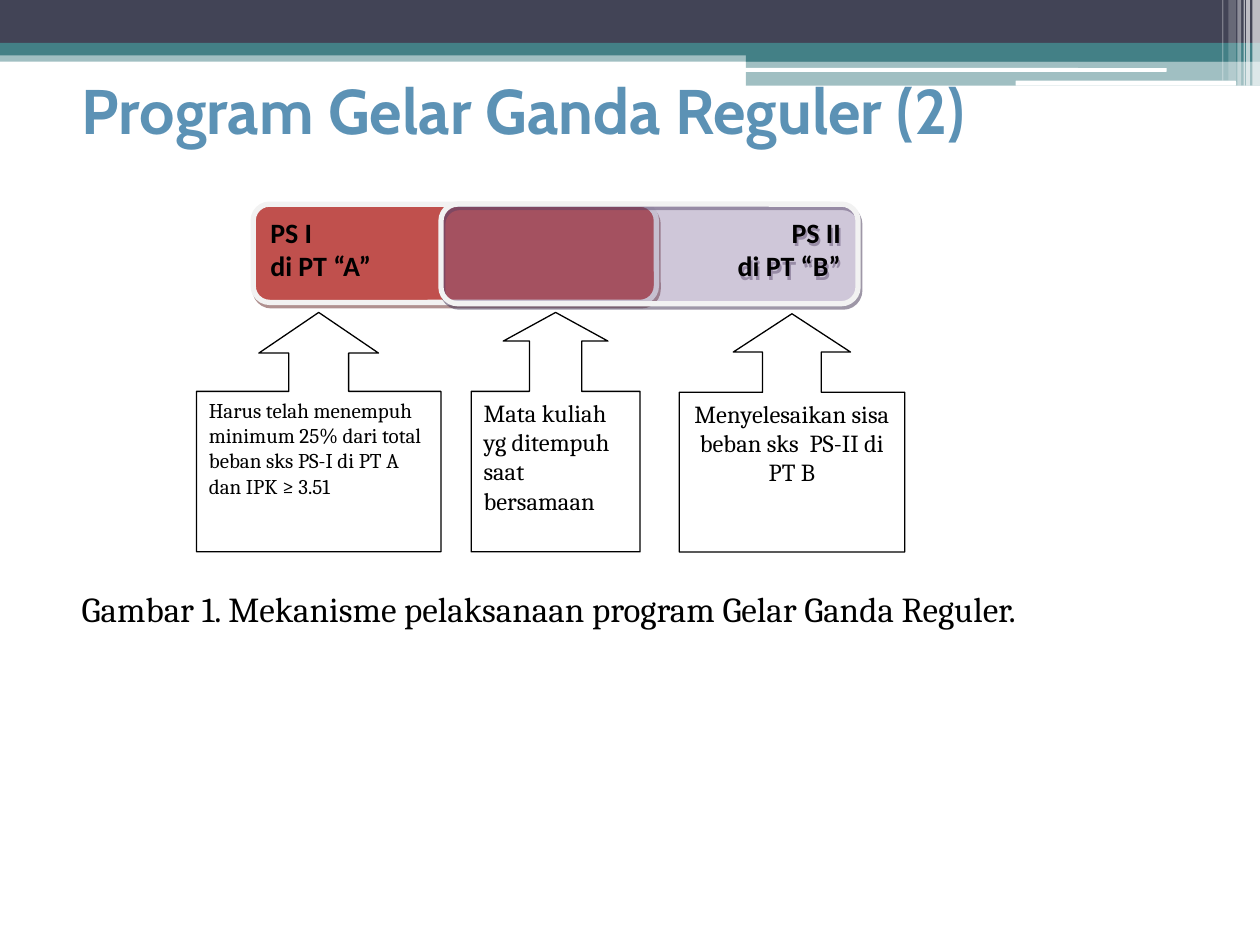
from lxml import etree
from pptx import Presentation
from pptx.dml.color import RGBColor
from pptx.enum.shapes import MSO_SHAPE
from pptx.enum.text import MSO_ANCHOR, PP_ALIGN
from pptx.oxml.ns import qn
from pptx.util import Inches, Pt

RECTANGLE, ROUNDED = MSO_SHAPE.RECTANGLE, MSO_SHAPE.ROUNDED_RECTANGLE
PROCESS = MSO_SHAPE.FLOWCHART_ALTERNATE_PROCESS
CALLOUT = MSO_SHAPE.UP_ARROW_CALLOUT
LEFT, CENTER, RIGHT, JUSTIFY = PP_ALIGN.LEFT, PP_ALIGN.CENTER, PP_ALIGN.RIGHT, PP_ALIGN.JUSTIFY
TOP, MIDDLE = MSO_ANCHOR.TOP, MSO_ANCHOR.MIDDLE

THEME = {
    "navy": "424456", "teal": "438086", "white": "FFFFFF", "black": "000000",
    "title": "5C92B5", "red": "C0504D", "purple": "8064A2", "border": "F2F2F2",
    "red_shadow": "622423", "purple_shadow": "3F3151",
    "title_format": {"size": Pt(36), "name": "Cabin", "bold": True},
    "program_format": {"size": Pt(16), "name": "Calibri", "bold": True},
    "small_format": {"size": Pt(12), "name": "Cambria", "bold": False},
    "note_format": {"size": Pt(14), "name": "Cambria", "bold": False},
    "caption_format": {"size": Pt(20), "name": "Cambria", "bold": False},
}

TITLE = "Program Gelar Ganda Reguler (2)"
CAPTION = "Gambar 1. Mekanisme pelaksanaan program Gelar Ganda Reguler."

BANDS = [
    (RECTANGLE, (0, 0.4, 10, 0.09), "teal", 50),
    (RECTANGLE, (0, 0, 10, 0.34), "navy", 100),
    (RECTANGLE, (0, 0.34, 10, 0.1), "teal", 100),
    (RECTANGLE, (5.92, 0.39, 4.08, 0.1), "teal", 100),
    (RECTANGLE, (5.92, 0.48, 4.08, 0.2), "teal", 50),
    (ROUNDED, (5.91, 0.54, 3.35, 0.03), "white", 100),
    (ROUNDED, (8.06, 0.64, 1.75, 0.04), "white", 100),
]
STRIPES = [
    (9.94, 0.06, 0.68, 65), (9.89, 0.03, 0.68, 65), (9.87, 0.01, 0.68, 60),
    (9.82, 0.03, 0.68, 40), (9.75, 0.06, 0.64, 20), (9.7, 0.01, 0.64, 30),
]
PROGRAMS = [
    (PROCESS, (2.01, 1.62, 3.2, 0.78), "red", 100, "red_shadow", JUSTIFY, ["PS I", "di PT “A”"]),
    (ROUNDED, (3.5, 1.62, 3.31, 0.79), "purple", 23, "purple_shadow", RIGHT, ["PS II", "di PT “B”"]),
]
STAGES = [
    ((1.56, 2.48, 1.94, 1.9), 0.25, "small_format", LEFT,
     "Harus telah menempuh minimum 25% dari total beban sks PS-I di PT A dan IPK ≥ 3.51"),
    ((3.74, 2.48, 1.34, 1.9), 0.31, "note_format", LEFT,
     "Mata kuliah yg ditempuh saat bersamaan"),
    ((5.39, 2.49, 1.79, 1.89), 0.26, "note_format", CENTER,
     "Menyelesaikan sisa beban sks  PS-II di PT B"),
]


def color(name):
    return RGBColor.from_string(THEME[name])


def add_alpha(color_element, percent):
    etree.SubElement(color_element, qn("a:alpha"), val=str(percent * 1000))


def add_box(slide, kind, place, fill, opacity=100, line=None, width=0):
    shape = slide.shapes.add_shape(kind, *map(Inches, place))
    shape.shadow.inherit = False
    shape.fill.solid()
    shape.fill.fore_color.rgb = color(fill)
    if opacity < 100:
        add_alpha(shape.element.spPr.find(qn("a:solidFill"))[0], opacity)
    if line:
        shape.line.color.rgb = color(line)
        shape.line.width = Pt(width)
    else:
        shape.line.fill.background()
    return shape


def add_shadow(shape, name):
    effects = shape.element.spPr.find(qn("a:effectLst"))
    shadow = etree.SubElement(effects, qn("a:outerShdw"), blurRad="0", dist=str(Pt(2.2)),
                              dir=str(63 * 60000), algn="ctr", rotWithShape="0")
    add_alpha(etree.SubElement(shadow, qn("a:srgbClr"), val=THEME[name]), 50)


def write(shape, lines, style, text_color="black", alignment=LEFT, anchor=TOP):
    frame = shape.text_frame
    frame.word_wrap = True
    frame.vertical_anchor = anchor
    frame.text = "\n".join(lines)
    for paragraph in frame.paragraphs:
        paragraph.alignment = alignment
        font = paragraph.runs[0].font
        for attribute, value in THEME[style].items():
            setattr(font, attribute, value)
        font.color.rgb = color(text_color)


def main():
    presentation = Presentation()
    presentation.slide_width, presentation.slide_height = Inches(10), Inches(7.5)
    slide = presentation.slides.add_slide(presentation.slide_layouts[5])

    for kind, place, fill, opacity in BANDS:
        add_box(slide, kind, place, fill, opacity)
    for left, width, height, opacity in STRIPES:
        add_box(slide, RECTANGLE, (left, 0, width, height), "white", opacity)

    title = slide.shapes.title
    title.left, title.top, title.width, title.height = map(Inches, (0.55, 0.47, 9, 0.79))
    write(title, [TITLE], "title_format", "title", anchor=MIDDLE)
    title.element.getparent().append(title.element)

    for kind, place, fill, opacity, shadow, alignment, lines in PROGRAMS:
        shape = add_box(slide, kind, place, fill, opacity, "border", 3)
        add_shadow(shape, shadow)
        write(shape, lines, "program_format", alignment=alignment)

    for place, arrow, style, alignment, text in STAGES:
        shape = add_box(slide, CALLOUT, place, "white", line="black", width=0.75)
        for index, value in enumerate((arrow, arrow, 0.17, 0.67)):
            shape.adjustments[index] = value
        write(shape, [text], style, alignment=alignment)

    caption = slide.shapes.add_textbox(*map(Inches, (0.55, 4.61, 9.22, 0.44)))
    write(caption, [CAPTION], "caption_format")

    presentation.save("out.pptx")


if __name__ == "__main__":
    main()
